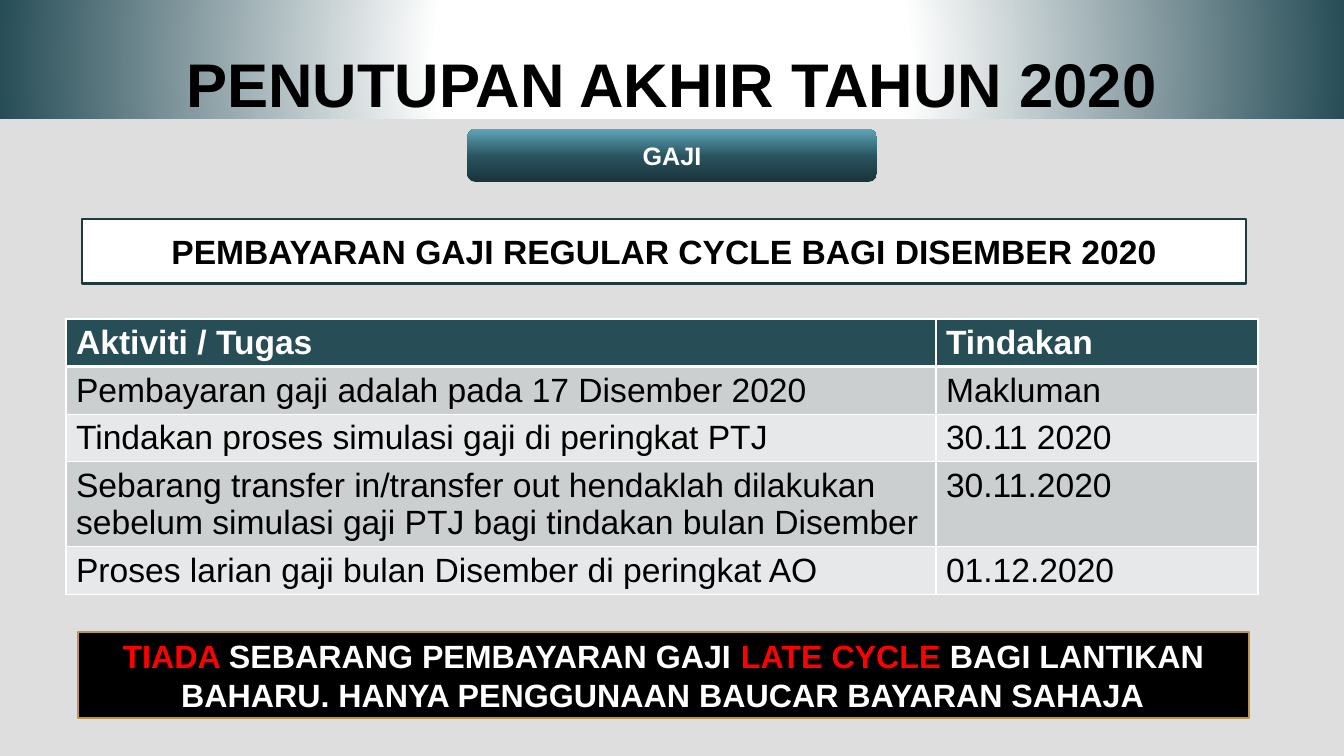
"""Build the year-end payroll closing slide."""
from dataclasses import dataclass

from lxml import etree
from pptx import Presentation
from pptx.dml.color import RGBColor
from pptx.enum.shapes import MSO_SHAPE
from pptx.enum.text import MSO_ANCHOR, PP_ALIGN
from pptx.oxml.ns import qn
from pptx.util import Pt

RECT, ROUND = MSO_SHAPE.RECTANGLE, MSO_SHAPE.ROUNDED_RECTANGLE
MIDDLE, BOTTOM = MSO_ANCHOR.MIDDLE, MSO_ANCHOR.BOTTOM
CENTER, LEFT = PP_ALIGN.CENTER, PP_ALIGN.LEFT


@dataclass(frozen=True)
class Theme:
    font: str = "Arial"
    page: str = "DEDEDE"
    white: str = "FFFFFF"
    black: str = "000000"
    red: str = "FF0000"
    teal: str = "274D57"
    edge: str = "1D3A41"
    gold: str = "BB964D"
    bands: tuple = ("CBCFD0", "E7E8E9")
    glow: tuple = ((0, "FFFFFF"), (35, "FFFFFF"), (100, "274D57"))
    gloss: tuple = ((0, "1A333A"), (48, "29535E"), (100, "5EA5B8"))
    title: int = 44
    label: int = 18
    body: int = 24
    alert: int = 23


T = Theme()
TITLE = [("PENUTUPAN AKHIR TAHUN 2020", T.black)]
LABEL = [("GAJI", T.white)]
HEADING = [("PEMBAYARAN GAJI REGULAR CYCLE BAGI DISEMBER 2020", T.black)]
ALERT = [
    ("TIADA ", T.red),
    ("SEBARANG PEMBAYARAN GAJI ", T.white),
    ("LATE CYCLE ", T.red),
    ("BAGI LANTIKAN BAHARU. HANYA PENGGUNAAN BAUCAR BAYARAN SAHAJA", T.white),
]
TASKS = [
    ("Aktiviti / Tugas", "Tindakan"),
    ("Pembayaran gaji adalah pada 17 Disember 2020", "Makluman"),
    ("Tindakan proses simulasi gaji di peringkat PTJ", "30.11 2020"),
    ("Sebarang transfer in/transfer out hendaklah dilakukan sebelum "
     "simulasi gaji PTJ bagi tindakan bulan Disember", "30.11.2020"),
    ("Proses larian gaji bulan Disember di peringkat AO", "01.12.2020"),
]
COLS = (870, 322)
ROWS = (47, 47, 47, 85, 47)
WIDE, HIGH = 1344, 756
SCALE = 914400 / 100.8


def px(n):
    return round(n * SCALE)


def rgb(code):
    return RGBColor.from_string(code)


def write(frame, runs, size, bold=True, align=CENTER):
    frame.word_wrap = True
    para = frame.paragraphs[0]
    para.alignment = align
    for text, color in runs:
        run = para.add_run()
        run.text = text
        font = run.font
        font.name, font.size, font.bold = T.font, Pt(size), bold
        font.color.rgb = rgb(color)
    return para


def block(slide, kind, area, runs, size, fill=None, line=None):
    shape = slide.shapes.add_shape(kind, *map(px, area))
    shape.shadow.inherit = False
    if fill:
        shape.fill.solid()
        shape.fill.fore_color.rgb = rgb(fill)
    if line:
        shape.line.color.rgb = rgb(line)
        shape.line.width = Pt(2)
    else:
        shape.line.fill.background()
    shape.text_frame.vertical_anchor = MIDDLE
    write(shape.text_frame, runs, size)
    return shape


def blend(shape, stops, angle=None):
    shape.fill.background()
    props = shape.element.spPr
    grad = etree.Element(qn("a:gradFill"), rotWithShape="1")
    group = etree.SubElement(grad, qn("a:gsLst"))
    for spot, color in stops:
        stop = etree.SubElement(group, qn("a:gs"), pos=str(spot * 1000))
        etree.SubElement(stop, qn("a:srgbClr"), val=color)
    if angle is None:
        ring = etree.SubElement(grad, qn("a:path"), {"path": "circle"})
        sides = dict.fromkeys("ltrb", "50000")
        etree.SubElement(ring, qn("a:fillToRect"), sides)
    else:
        etree.SubElement(grad, qn("a:lin"), ang=str(angle * 60000), scaled="0")
    props.replace(props.find(qn("a:noFill")), grad)


def border(cell, row):
    props = cell._tc.get_or_add_tcPr()
    for spot, side in enumerate(("lnL", "lnR", "lnT", "lnB")):
        thick = (row, side) in ((0, "lnB"), (1, "lnT"))
        line = etree.Element(qn("a:" + side), w=str(Pt(3 if thick else 1)))
        fill = etree.SubElement(line, qn("a:solidFill"))
        etree.SubElement(fill, qn("a:srgbClr"), val=T.white)
        props.insert(spot, line)


def grid(slide, left, top):
    area = map(px, (left, top, sum(COLS), sum(ROWS)))
    table = slide.shapes.add_table(len(ROWS), len(COLS), *area).table
    for col, width in zip(table.columns, COLS):
        col.width = px(width)
    for r, (texts, height) in enumerate(zip(TASKS, ROWS)):
        table.rows[r].height = px(height)
        head = r == 0
        fill = T.teal if head else T.bands[(r - 1) % 2]
        ink = T.white if head else T.black
        for c, text in enumerate(texts):
            cell = table.cell(r, c)
            cell.fill.solid()
            cell.fill.fore_color.rgb = rgb(fill)
            write(cell.text_frame, [(text, ink)], T.body, head, LEFT)
            border(cell, r)


def main():
    deck = Presentation()
    deck.slide_width, deck.slide_height = px(WIDE), px(HIGH)
    slide = deck.slides.add_slide(deck.slide_layouts[6])
    slide.background.fill.solid()
    slide.background.fill.fore_color.rgb = rgb(T.page)

    banner = block(slide, RECT, (0, 0, WIDE, 119), TITLE, T.title)
    blend(banner, T.glow)
    frame = banner.text_frame
    frame.vertical_anchor, frame.margin_bottom = BOTTOM, 0
    frame.paragraphs[0].line_spacing = 0.8

    label = block(slide, ROUND, (467, 129, 410, 53), LABEL, T.label)
    blend(label, T.gloss, 270)

    grid(slide, 66, 319)
    block(slide, RECT, (82, 219, 1164, 65), HEADING, T.body, T.white, T.edge)
    block(slide, RECT, (78, 632, 1171, 86), ALERT, T.alert, T.black, T.gold)
    deck.save("out.pptx")


if __name__ == "__main__":
    main()
